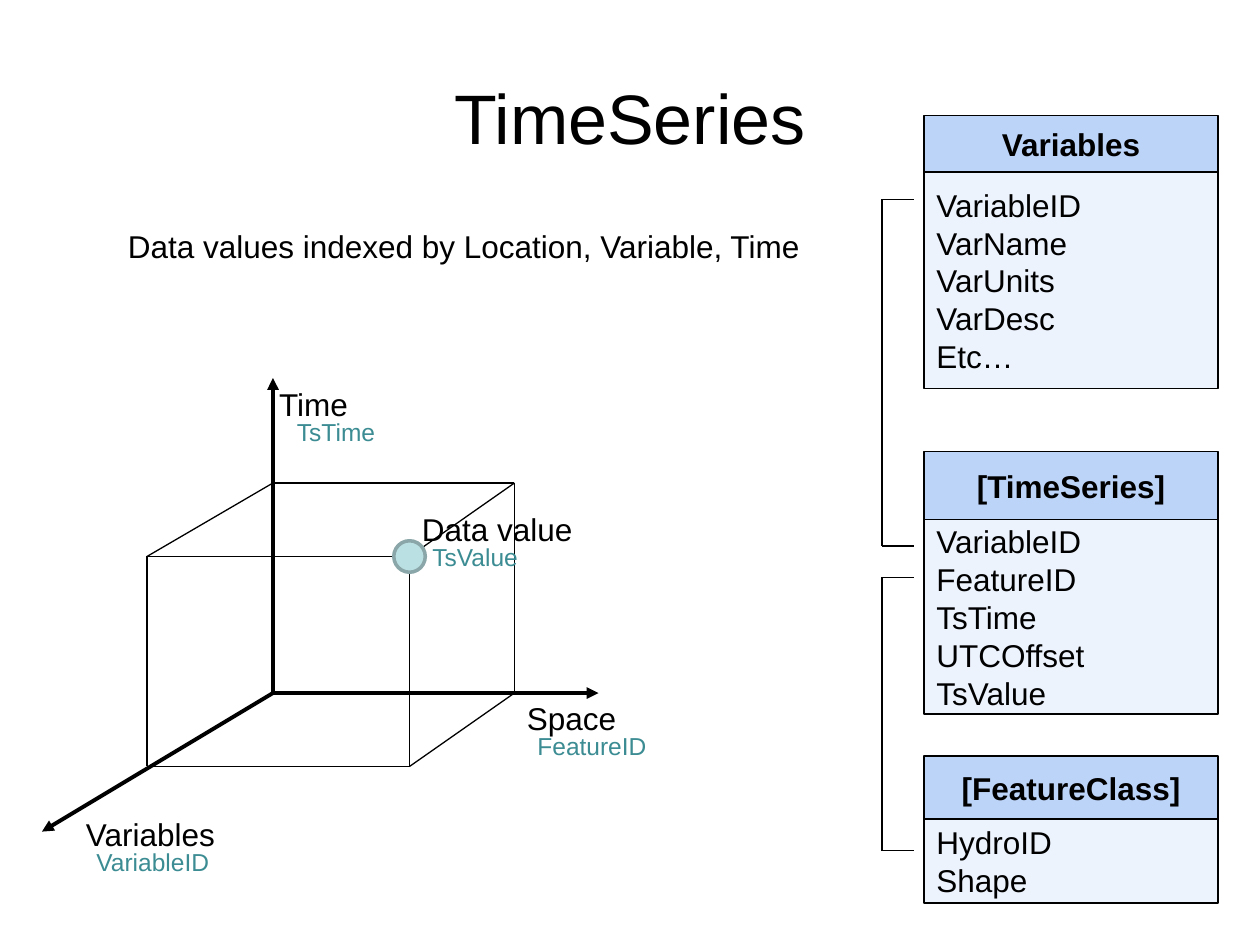
from pptx import Presentation, util as u
from pptx.dml.color import RGBColor
from pptx.enum import shapes, text
from pptx.oxml.ns import qn
from lxml import etree

COLS, ROWS = 120, 90
HUES = {"ink": "000000", "teal": "3C8C93", "head": "BDD4F9",
        "body": "EDF3FD", "dot": "BBE0E3", "rim": "8AA6A8"}
KIND = shapes.MSO_SHAPE
MID, LEFT = text.PP_ALIGN.CENTER, text.PP_ALIGN.LEFT


class Board:
    """Draw styled elements on one slide, measured in grid columns and rows."""

    def __init__(self, deck):
        self.slide = deck.slides.add_slide(deck.slide_layouts[6])
        self.wide, self.high = deck.slide_width / COLS, deck.slide_height / ROWS
        self.font = {"name": "Arial", "size": u.Pt(18), "bold": False}

    def place(self, x, y, w, h):
        """Turn grid units into slide lengths."""
        return [round(n * s) for n, s in zip((x, y, w, h), (self.wide, self.high) * 2)]

    def letter(self, shape, lines, hue="ink", align=LEFT, wrap=True, **form):
        """Fill a shape with one paragraph for each line."""
        frame = shape.text_frame
        frame.word_wrap = wrap
        frame.vertical_anchor = text.MSO_ANCHOR.MIDDLE
        frame.text = "\n".join(lines)
        for para in frame.paragraphs:
            para.alignment = align
            for run in para.runs:
                for key, val in {**self.font, **form}.items():
                    setattr(run.font, key, val)
                run.font.color.rgb = RGBColor.from_string(HUES[hue])

    def label(self, words, x, y, w, h=4.8, **form):
        """Add a text box."""
        box = self.slide.shapes.add_textbox(*self.place(x, y, w, h))
        self.letter(box, [words], **form)

    def shape(self, kind, area, fill, rim="ink", width=0.75):
        """Add a filled and outlined preset shape."""
        item = self.slide.shapes.add_shape(kind, *self.place(*area))
        item.shadow.inherit = False
        item.fill.solid()
        item.fill.fore_color.rgb = RGBColor.from_string(HUES[fill])
        item.line.color.rgb = RGBColor.from_string(HUES[rim])
        item.line.width = u.Pt(width)
        return item

    def card(self, name, fields, top, split, end, x=88, w=28):
        """Add a table card with a heading and its fields."""
        head = self.shape(KIND.FLOWCHART_PROCESS, (x, top, w, split - top), "head")
        self.letter(head, [name], align=MID, bold=True)
        body = self.shape(KIND.FLOWCHART_PROCESS, (x, split, w, end - split), "body")
        self.letter(body, fields)

    def line(self, start, end, width=0.75, arrow=False):
        """Add a straight line, with an arrowhead at its end if asked."""
        item = self.slide.shapes.add_connector(
            shapes.MSO_CONNECTOR.STRAIGHT, *self.place(*start, *end))
        item.line.color.rgb = RGBColor.from_string(HUES["ink"])
        item.line.width = u.Pt(width)
        props = item.element.spPr
        if arrow:
            etree.SubElement(props.find(qn("a:ln")), qn("a:tailEnd"), type="triangle")
        etree.SubElement(props, qn("a:effectLst"))

    def chain(self, *dots):
        """Join points with thin lines."""
        for start, end in zip(dots, dots[1:]):
            self.line(start, end)


def main():
    """Build the slide and save it."""
    deck = Presentation()
    deck.slide_width, deck.slide_height = u.Inches(10), u.Inches(7.5)
    board = Board(deck)

    board.label("TimeSeries", 6, 3.6, 108, 15, align=MID, size=u.Pt(40))
    board.label("Data values indexed by Location, Variable, Time", 11, 21, 67, wrap=False)

    board.card("Variables", ["VariableID", "VarName\vVarUnits", "VarDesc", "Etc…"],
               11, 16.4, 37)
    board.card("[TimeSeries]", ["VariableID", "FeatureID", "TsTime", "UTCOffset", "TsValue"],
               43, 49.5, 68)
    board.card("[FeatureClass]", ["HydroID", "Shape"], 72, 78, 86)
    for top, end in ((19, 52), (55, 81)):
        board.chain((87, top), (84, top), (84, end), (87, end))

    root, back, side = (26, 66), (26, 46), (49, 46)
    front, value, low, base = (14, 53), (39, 53), (14, 73), (39, 73)
    for tip in ((26, 36), (4, 79.2), (57, 66)):
        board.line(root, tip, width=2.25, arrow=True)
    board.chain(front, back, side, value, front, low, base, value)
    board.chain(side, (49, 66), base)
    board.shape(KIND.OVAL, (value[0] - 1.5, value[1] - 1.5, 3, 3), "dot", "rim", 2)

    for name, x, y, w, field, shift, span in (
            ("Time", 25.4, 36.1, 9, "TsTime", 1.7, 10),
            ("Space", 49, 66, 11, "FeatureID", 1, 12.8),
            ("Variables", 7, 77, 14.8, "VariableID", 1, 13.2),
            ("Data value", 39, 48, 16.9, "TsValue", 1, 10.6)):
        board.label(name, x, y, w, wrap=False)
        board.label(field, x + shift, y + 3, span, 4.1,
                    hue="teal", wrap=False, size=u.Pt(14))

    deck.save("out.pptx")


if __name__ == "__main__":
    main()
